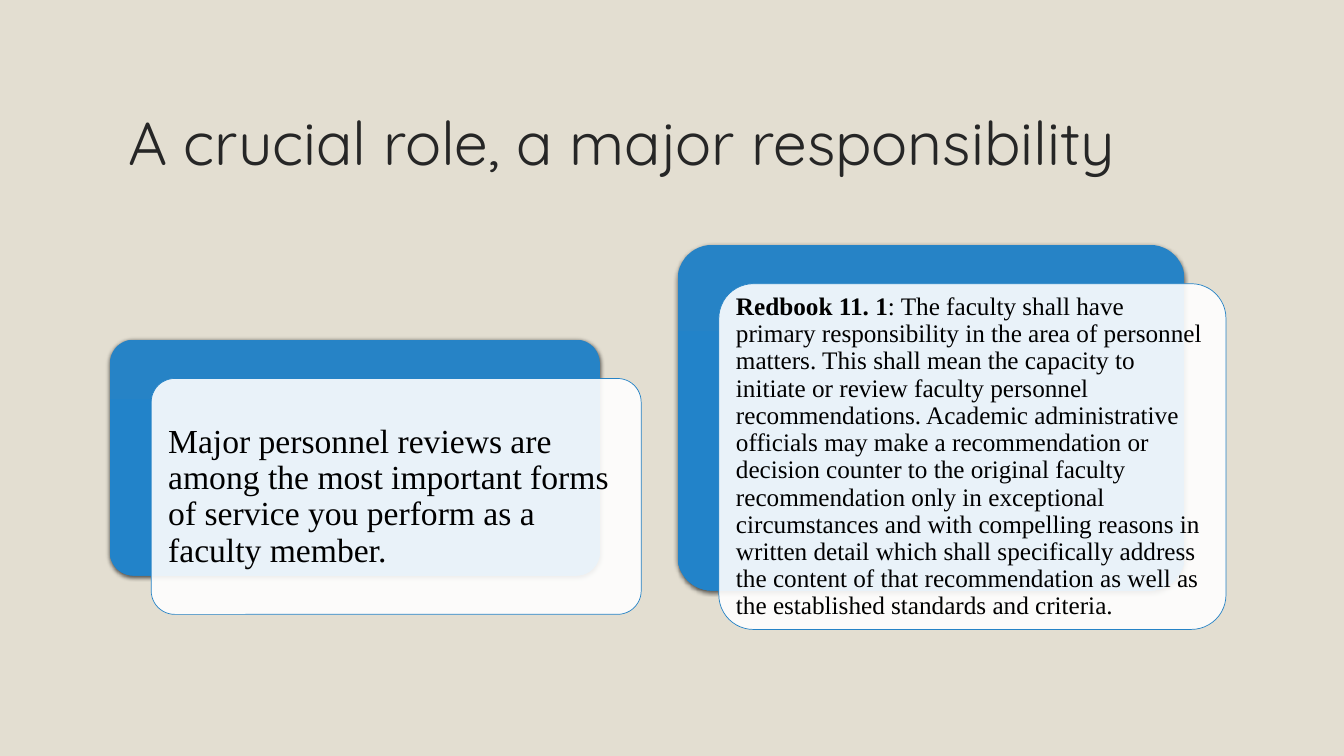
from copy import deepcopy

from lxml import etree
from pptx import Presentation
from pptx.dml.color import RGBColor
from pptx.enum import shapes, text
from pptx.oxml import ns
from pptx.util import Inches, Pt

COLORS = {
    "background": "E3DED1",
    "title": "262626",
    "text": "000000",
    "card": "FFFFFF",
    "blue": "2683C6",
    "blue_middle": "2283C9",
    "blue_end": "2282C8",
    "shadow": "000000",
}
TITLE_FONT, BODY_FONT = "Quicksand", "Times New Roman"
CARD_SHIFT = (0.41, 0.385)


def color(name):
    return RGBColor.from_string(COLORS[name])


def write_text(shape, runs, size, font, ink="text", inset=0.1, space_after=0):
    """Fill a shape with one paragraph of (wording, bold) runs."""
    frame = shape.text_frame
    frame.word_wrap = True
    frame.auto_size = text.MSO_AUTO_SIZE.NONE
    frame.vertical_anchor = text.MSO_ANCHOR.MIDDLE
    frame.margin_left = frame.margin_right = Inches(inset)
    frame.margin_top = frame.margin_bottom = Inches(inset)
    paragraph = frame.paragraphs[0]
    paragraph.alignment = text.PP_ALIGN.LEFT
    paragraph.line_spacing = 0.9
    paragraph.space_after = Pt(space_after)
    for wording, bold in runs:
        run = paragraph.add_run()
        run.text = wording
        run.font.size = Pt(size)
        run.font.name = font
        run.font.bold = bold
        run.font.color.rgb = color(ink)


def add_rounded(slide, left, top, width, height):
    shape = slide.shapes.add_shape(
        shapes.MSO_SHAPE.ROUNDED_RECTANGLE,
        Inches(left), Inches(top), Inches(width), Inches(height))
    shape.adjustments[0] = 0.1
    shape.shadow.inherit = False
    return shape


def fill_blue_gradient(shape):
    shape.fill.gradient()
    shape.fill.gradient_angle = 270
    stop_list = shape._element.spPr.find(".//" + ns.qn("a:gsLst"))
    stop_list.insert(1, deepcopy(stop_list[0]))
    names = ("blue", "blue_middle", "blue_end")
    for stop, name, position in zip(shape.fill.gradient_stops, names, (0, 0.5, 1)):
        stop.color.rgb = color(name)
        stop.position = position


def add_shadow(shape):
    effects = shape._element.spPr.find(ns.qn("a:effectLst"))
    shadow = etree.SubElement(
        effects, ns.qn("a:outerShdw"), blurRad=str(Pt(3)), dist=str(Pt(1)),
        dir="5400000", algn="ctr", rotWithShape="0")
    ink = etree.SubElement(shadow, ns.qn("a:srgbClr"), val=COLORS["shadow"])
    etree.SubElement(ink, ns.qn("a:alpha"), val="63000")


def add_card(slide, left, top, width, height):
    """Add a blue panel and, shifted over it, a translucent white card."""
    panel = add_rounded(slide, left, top, width, height)
    fill_blue_gradient(panel)
    panel.line.fill.background()
    add_shadow(panel)

    card = add_rounded(
        slide, left + CARD_SHIFT[0], top + CARD_SHIFT[1], width, height)
    card.fill.solid()
    card.fill.fore_color.rgb = color("card")
    fill_color = card._element.spPr.find(ns.qn("a:solidFill"))[0]
    etree.SubElement(fill_color, ns.qn("a:alpha"), val="90000")
    card.line.color.rgb = color("blue")
    card.line.width = Pt(0.5)


def add_card_text(slide, box, runs, size, inset):
    textbox = slide.shapes.add_textbox(*map(Inches, box))
    write_text(textbox, runs, size, BODY_FONT, inset=inset,
               space_after=0.35 * size)


def add_title(slide, wording):
    title = slide.shapes.title
    title.left, title.top = Inches(1.17), Inches(0.7)
    title.width, title.height = Inches(11), Inches(1.5)
    write_text(title, [(wording, False)], 43.2, TITLE_FONT, ink="title")


def main():
    presentation = Presentation()
    presentation.slide_width = Inches(13.33)
    presentation.slide_height = Inches(7.5)
    slide = presentation.slides.add_slide(presentation.slide_layouts[5])
    slide.background.fill.solid()
    slide.background.fill.fore_color.rgb = color("background")

    add_title(slide, "A crucial role, a major responsibility")

    add_card(slide, 1.09, 3.37, 4.86, 2.34)
    add_card_text(slide, (1.57, 3.83, 4.72, 2.2), [
        ("Major personnel reviews are among the most important forms of "
         "service you perform as a faculty member.", False),
    ], size=24, inset=0.1)

    add_card(slide, 6.72, 2.43, 5.03, 3.43)
    add_card_text(slide, (7.23, 2.92, 4.83, 3.23), [
        ("Redbook 11. 1", True),
        (": The faculty shall have primary responsibility in the area of "
         "personnel matters. This shall mean the capacity to initiate or "
         "review faculty personnel recommendations. Academic administrative "
         "officials may make a recommendation or decision counter to the "
         "original faculty recommendation only in exceptional circumstances "
         "and with compelling reasons in written detail which shall "
         "specifically address the content of that recommendation as well as "
         "the established standards and criteria.", False),
    ], size=18, inset=0.07)

    presentation.save("out.pptx")


if __name__ == "__main__":
    main()
